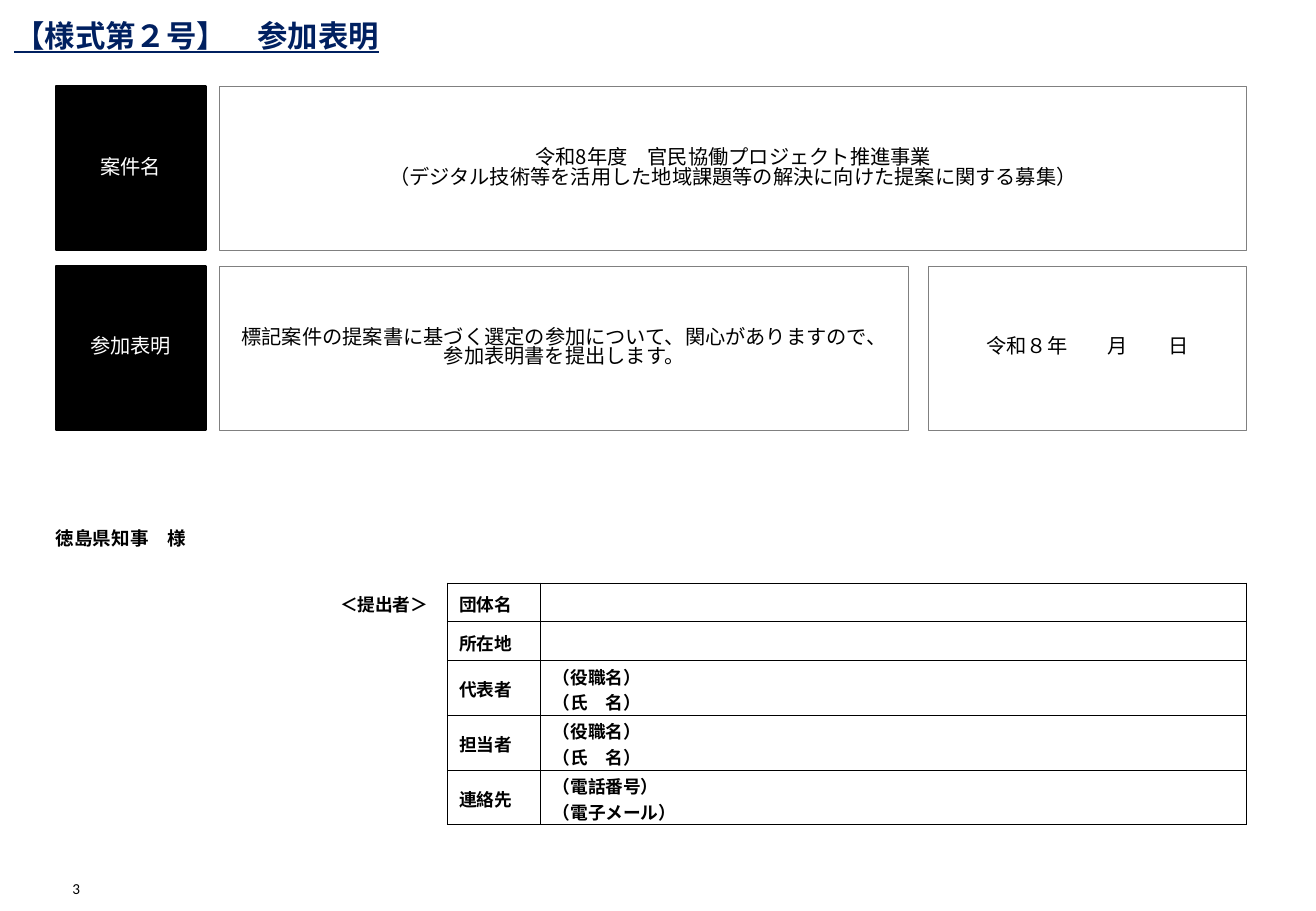
from lxml.etree import SubElement
from pptx import Presentation
from pptx.dml.color import RGBColor
from pptx.enum.shapes import MSO_SHAPE
from pptx.enum.text import MSO_ANCHOR, PP_ALIGN
from pptx.oxml.ns import qn
from pptx.util import Inches, Pt

JAPANESE_FONT = "Noto Sans CJK JP"
BLACK, WHITE, GRAY, NAVY = "000000", "FFFFFF", "808080", "002060"

# Grid of the form, in inches
LEFT, RIGHT = 0.46, 10.26
LABEL_WIDTH = 1.23
CONTENT_LEFT = 1.81
DATE_LEFT, DATE_GAP = 7.64, 0.16
BAND_TOP, BAND_HEIGHT, BAND_PITCH = 0.71, 1.35, 1.48

SUBMITTER_COLUMNS = [0.98, 0.77, 5.81]
SUBMITTER_ROWS = [
    (0.32, ["＜提出者＞", "団体名", ""]),
    (0.32, ["", "所在地", ""]),
    (0.45, ["", "代表者", "（役職名）\n（氏　名）"]),
    (0.45, ["", "担当者", "（役職名）\n（氏　名）"]),
    (0.45, ["", "連絡先", "（電話番号）\n（電子メール）"]),
]


def color(hex_string):
    return RGBColor.from_string(hex_string)


def write(frame, text, size, hex_color, font=JAPANESE_FONT, bold=False,
          align=PP_ALIGN.LEFT, spacing=None):
    frame.text = text
    for paragraph in frame.paragraphs:
        paragraph.alignment = align
        paragraph.line_spacing = spacing
        paragraph.font.size = Pt(size)
        paragraph.font.bold = bold
        paragraph.font.name = font
        paragraph.font.color.rgb = color(hex_color)
        defaults = paragraph._p.pPr.find(qn("a:defRPr"))
        SubElement(defaults, qn("a:ea"), typeface=JAPANESE_FONT)
        if not paragraph.text:
            paragraph._p.get_or_add_endParaRPr().set("sz", str(int(size * 100)))


def add_text(slide, left, top, width, height, text, size, hex_color,
             inset=True, wrap=True, anchor=MSO_ANCHOR.TOP, **style):
    frame = slide.shapes.add_textbox(
        Inches(left), Inches(top), Inches(width), Inches(height)).text_frame
    frame.word_wrap = wrap
    frame.vertical_anchor = anchor
    if not inset:
        frame.margin_left = frame.margin_right = 0
        frame.margin_top = frame.margin_bottom = 0
    write(frame, text, size, hex_color, **style)
    return frame


def add_box(slide, band, left, right, text, fill, line, line_width, text_color):
    """Add a bordered box in the given horizontal band of the form."""
    box = slide.shapes.add_shape(
        MSO_SHAPE.RECTANGLE, Inches(left), Inches(BAND_TOP + band * BAND_PITCH),
        Inches(right - left), Inches(BAND_HEIGHT))
    box.shadow.inherit = False
    box.fill.solid()
    box.fill.fore_color.rgb = color(fill)
    box.line.color.rgb = color(line)
    box.line.width = Pt(line_width)
    box.text_frame.word_wrap = True
    box.text_frame.vertical_anchor = MSO_ANCHOR.MIDDLE
    write(box.text_frame, text, 12, text_color, align=PP_ALIGN.CENTER, spacing=0.82)


def add_label(slide, band, text):
    add_box(slide, band, LEFT, LEFT + LABEL_WIDTH, text, BLACK, BLACK, 1.5, WHITE)


def add_entry(slide, band, left, right, text):
    add_box(slide, band, left, right, text, WHITE, GRAY, 0.5, BLACK)


def set_borders(cell, black_sides):
    properties = cell._tc.get_or_add_tcPr()
    for index, side in enumerate("LRTB"):
        border = SubElement(properties, qn(f"a:ln{side}"), w=str(Pt(0.5)))
        properties.insert(index, border)
        if side in black_sides:
            fill = SubElement(border, qn("a:solidFill"))
            SubElement(fill, qn("a:srgbClr"), val=BLACK)
        else:
            SubElement(border, qn("a:noFill"))


def add_submitter_table(slide, top):
    width = sum(SUBMITTER_COLUMNS)
    height = sum(row_height for row_height, _ in SUBMITTER_ROWS)
    table = slide.shapes.add_table(
        len(SUBMITTER_ROWS), len(SUBMITTER_COLUMNS), Inches(RIGHT - width),
        Inches(top), Inches(width), Inches(height)).table
    table.first_row = table.horz_banding = False
    for column, column_width in zip(table.columns, SUBMITTER_COLUMNS):
        column.width = Inches(column_width)
    for row, (row_height, texts) in zip(table.rows, SUBMITTER_ROWS):
        row.height = Inches(row_height)
        for index, (cell, text) in enumerate(zip(row.cells, texts)):
            cell.fill.background()
            cell.vertical_anchor = MSO_ANCHOR.MIDDLE
            cell.margin_top, cell.margin_bottom = Inches(0.02), 0
            write(cell.text_frame, text, 10.5, BLACK, font="Arial", bold=True)
            set_borders(cell, "LRTB" if index else "R")


def main():
    presentation = Presentation()
    presentation.slide_width = Inches(10.83)
    presentation.slide_height = Inches(7.5)
    slide = presentation.slides.add_slide(presentation.slide_layouts[6])

    add_text(slide, LEFT, 7.2, 0.2, 0.19, "3", 9, BLACK, inset=False, wrap=False,
             anchor=MSO_ANCHOR.BOTTOM, font="Calibri", align=PP_ALIGN.RIGHT)
    title = add_text(slide, 0.02, 0, 5.37, 0.51, "【様式第２号】　参加表明", 18, NAVY,
                     bold=True, spacing=1.3)
    title.paragraphs[0].font.underline = True

    add_label(slide, 0, "案件名")
    add_entry(slide, 0, CONTENT_LEFT, RIGHT,
              "令和8年度　官民協働プロジェクト推進事業\n"
              "（デジタル技術等を活用した地域課題等の解決に向けた提案に関する募集）")
    add_label(slide, 1, "参加表明")
    add_entry(slide, 1, CONTENT_LEFT, DATE_LEFT - DATE_GAP,
              "標記案件の提案書に基づく選定の参加について、関心がありますので、\v"
              "参加表明書を提出します。")
    add_entry(slide, 1, DATE_LEFT, RIGHT, "令和８年　　月　　日")

    add_submitter_table(slide, 4.8)
    add_text(slide, LEFT, 4.27, 1.53, 0.23, "徳島県知事　様", 11, BLACK, inset=False,
             font="Calibri", bold=True, spacing=Pt(18))
    presentation.save("out.pptx")


if __name__ == "__main__":
    main()
